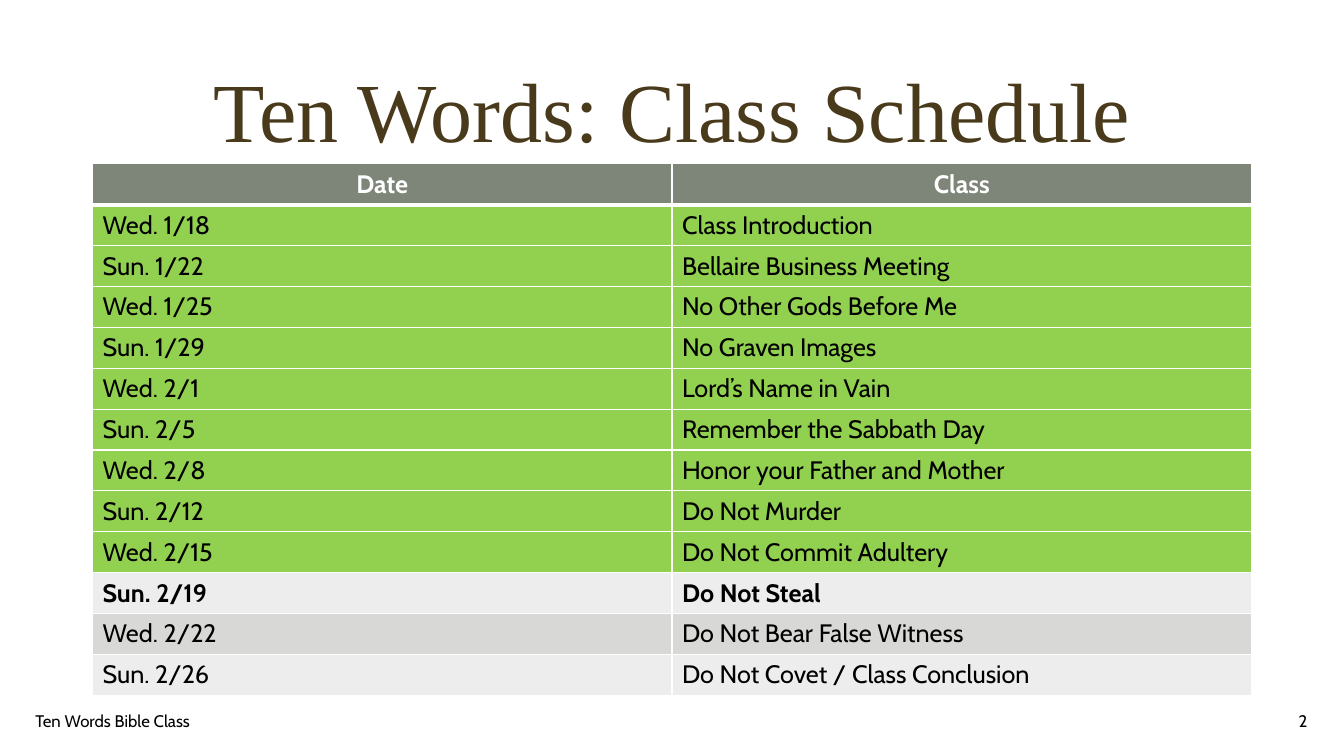
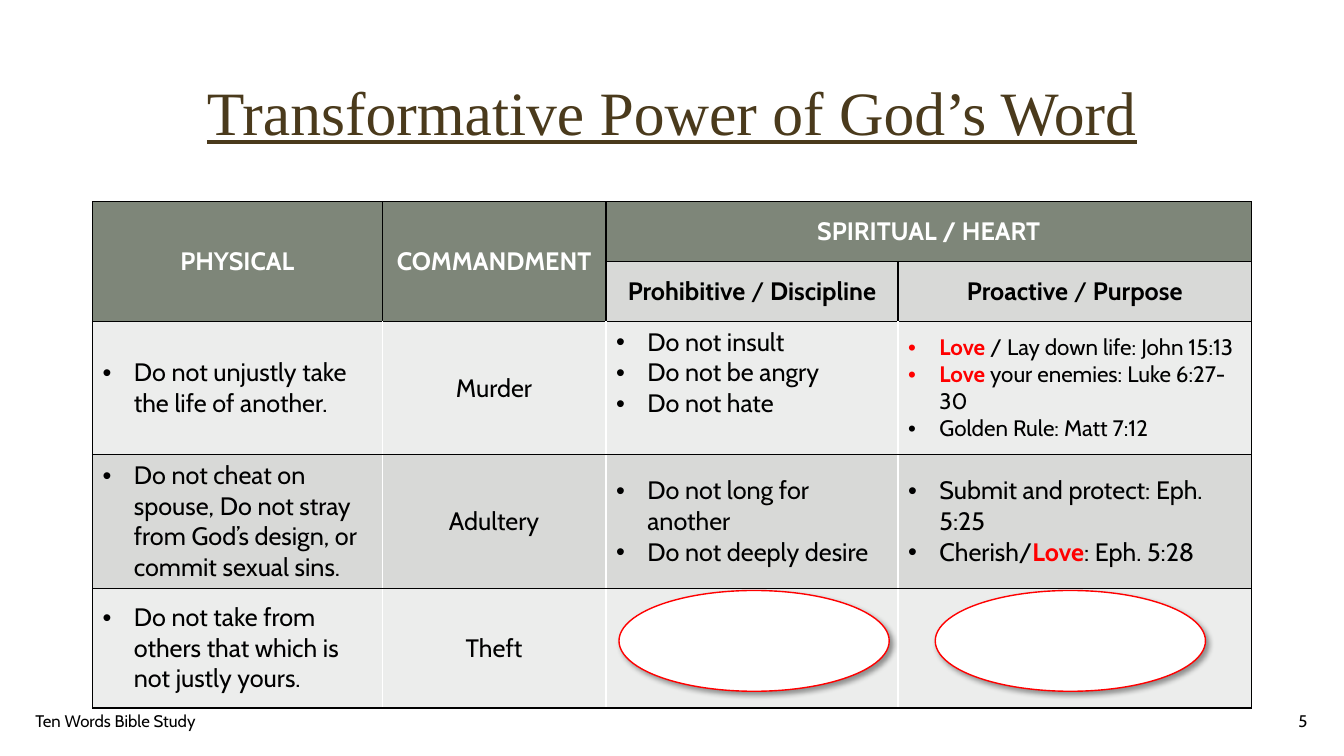
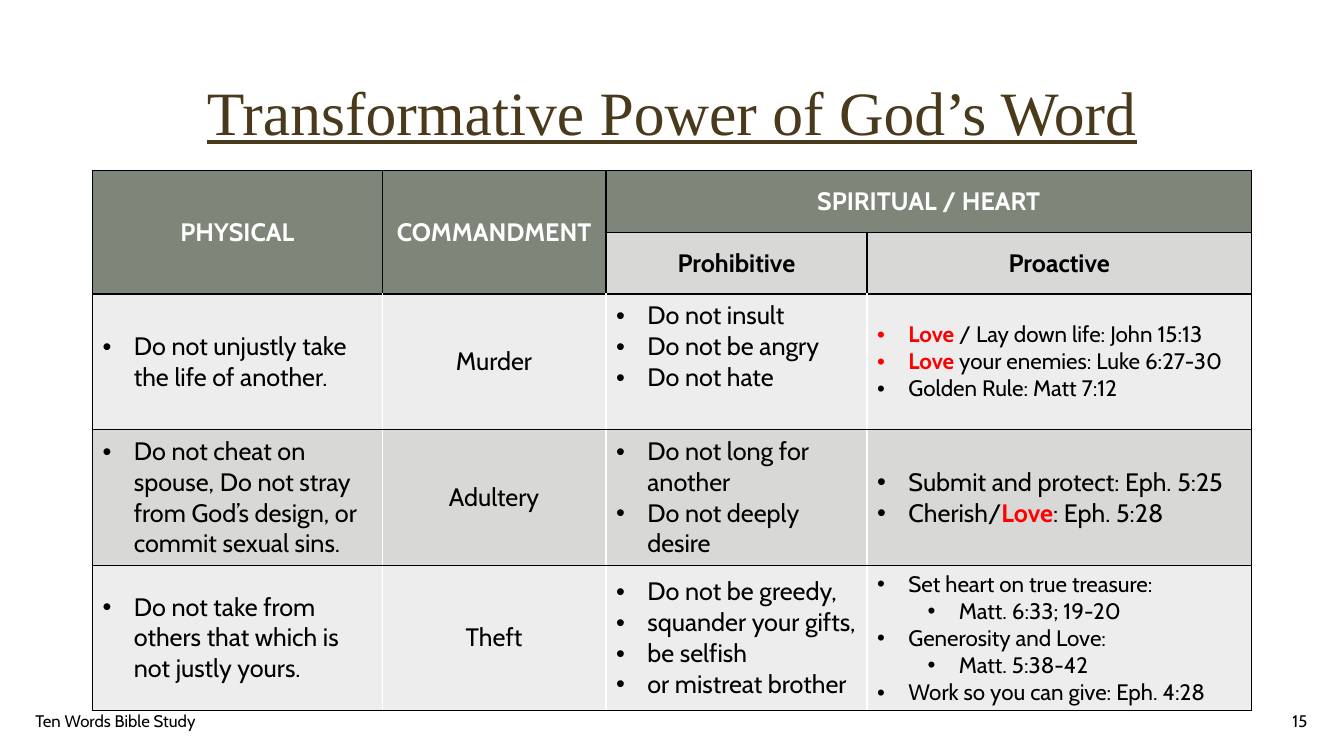
from lxml.etree import SubElement
from pptx import Presentation
from pptx.dml.color import RGBColor
from pptx.enum.shapes import MSO_SHAPE as Shape
from pptx.enum.text import MSO_ANCHOR as Anchor, PP_ALIGN as Align
from pptx.oxml.ns import qn
from pptx.util import Cm, Pt

# Colours
BROWN = RGBColor(0x4A, 0x3A, 0x1C)
BLACK = RGBColor(0, 0, 0)
WHITE = RGBColor(0xFF, 0xFF, 0xFF)
RED = RGBColor(0xFF, 0, 0)
SAGE = RGBColor(0x7E, 0x86, 0x79)
GREEN = RGBColor(0x92, 0xD0, 0x50)
LIGHT = RGBColor(0xEC, 0xED, 0xEC)
GREY = RGBColor(0xD8, 0xD9, 0xD7)

# Text formats
BODY = dict(name="Cabin", size=Pt(18), bold=False, color=BLACK)
SMALL = BODY | dict(size=Pt(16))
FOOTER = BODY | dict(size=Pt(12))
HEADER = BODY | dict(bold=True, color=WHITE)
SUBHEADER = BODY | dict(bold=True)
TITLE = dict(name="Times New Roman", color=BROWN)
KEYWORD = dict(bold=True, color=RED)
REGULAR = dict(bold=False)

# Table geometry in cm
TABLE_LEFT, TABLE_WIDTH = 2.33, 29.21
BULLET_INDENT, LEVEL_INDENT = 0.79, 1.27

# Class schedule
SCHEDULE = [
    ("Wed. 1/18", "Class Introduction"),
    ("Sun. 1/22", "Bellaire Business Meeting"),
    ("Wed. 1/25", "No Other Gods Before Me"),
    ("Sun. 1/29", "No Graven Images"),
    ("Wed. 2/1", "Lord’s Name in Vain"),
    ("Sun. 2/5", "Remember the Sabbath Day"),
    ("Wed. 2/8", "Honor your Father and Mother"),
    ("Sun. 2/12", "Do Not Murder"),
    ("Wed. 2/15", "Do Not Commit Adultery"),
    ("Sun. 2/19", "Do Not Steal"),
    ("Wed. 2/22", "Do Not Bear False Witness"),
    ("Sun. 2/26", "Do Not Covet / Class Conclusion"),
]
CLASSES_DONE = 9

# Commandment rows: *accented* words, ">" opens a second-level bullet
COMMANDMENTS = [
    ("Do not unjustly take the life of another.", "Murder",
     ["Do not insult", "Do not be angry", "Do not hate"],
     ["*Love* / Lay down life: John 15:13",
      "*Love* your enemies: Luke 6:27-30",
      "Golden Rule: Matt 7:12"]),
    ("Do not cheat on spouse, Do not stray from God’s design, "
     "or commit sexual sins.", "Adultery",
     ["Do not long for another", "Do not deeply desire"],
     ["Submit and protect: Eph. 5:25", "Cherish/*Love*: Eph. 5:28"]),
    ("Do not take from others that which is not justly yours.", "Theft",
     ["Do not be greedy,", "squander your gifts,", "be selfish",
      "or mistreat brother"],
     ["Set heart on true treasure:", ">Matt. 6:33; 19-20",
      "Generosity and Love:", ">Matt. 5:38-42",
      "Work so you can give: Eph. 4:28"]),
]


def add_bullet(paragraph, level):
    paragraph.level = level
    properties = paragraph._p.get_or_add_pPr()
    properties.set("marL", str(Cm(BULLET_INDENT + level * LEVEL_INDENT)))
    properties.set("indent", str(-Cm(BULLET_INDENT)))
    SubElement(properties, qn("a:buFont"), typeface="Arial")
    SubElement(properties, qn("a:buChar"), char="•")


def write(frame, lines, style, align=Align.LEFT, bullets=False, accent=KEYWORD):
    """Write one paragraph a line; text between asterisks takes the accent."""
    for number, line in enumerate(lines):
        paragraph = frame.add_paragraph() if number else frame.paragraphs[0]
        paragraph.alignment = align
        if bullets:
            add_bullet(paragraph, int(line.startswith(">")))
        for position, piece in enumerate(line.lstrip(">").split("*")):
            if not piece:
                continue
            run = paragraph.add_run()
            run.text = piece
            for key, value in (style | accent if position % 2 else style).items():
                if key == "color":
                    run.font.color.rgb = value
                else:
                    setattr(run.font, key, value)


def add_text(slide, box, text, style, align=Align.LEFT):
    frame = slide.shapes.add_textbox(*map(Cm, box)).text_frame
    frame.word_wrap = True
    frame.vertical_anchor = Anchor.MIDDLE
    write(frame, [text], style, align)
    return frame


def add_frame(presentation, title, title_style, footer, number):
    """New slide with the shared title and footer."""
    slide = presentation.slides.add_slide(presentation.slide_layouts[6])
    frame = add_text(slide, (2.33, 1.07, 29.21, 3.68), title,
                     TITLE | title_style, Align.CENTER)
    frame.paragraphs[0].line_spacing = 0.9
    add_text(slide, (0.64, 17.65, 11.43, 1.02), footer, FOOTER)
    add_text(slide, (25.58, 17.65, 7.62, 1.02), str(number), FOOTER, Align.RIGHT)
    return slide


def add_grid(slide, top, widths, heights):
    """Plain table with the given column widths and row heights."""
    table = slide.shapes.add_table(
        len(heights), len(widths), Cm(TABLE_LEFT), Cm(top),
        Cm(sum(widths)), Cm(sum(heights))).table
    table.first_row = table.horz_banding = False
    for column, width in zip(table.columns, widths):
        column.width = Cm(width)
    for row, height in zip(table.rows, heights):
        row.height = Cm(height)
    return table


def paint(cell, color, **borders):
    """Border each side with (colour, points), then fill the cell."""
    properties = cell._tc.get_or_add_tcPr()
    for side in "LRTB":
        line_color, points = borders[side]
        line = SubElement(properties, qn(f"a:ln{side}"), w=str(Pt(points)))
        fill = SubElement(line, qn("a:solidFill"))
        SubElement(fill, qn("a:srgbClr"), val=str(line_color))
    cell.fill.solid()
    cell.fill.fore_color.rgb = color


def add_schedule(slide, top):
    table = add_grid(slide, top, [TABLE_WIDTH / 2] * 2,
                     [1.03] * (len(SCHEDULE) + 1))
    thin = dict.fromkeys("LRTB", (WHITE, 1))
    for r, texts in enumerate([("Date", "Class")] + SCHEDULE):
        header, current = r == 0, r == CLASSES_DONE + 1
        band = GREEN if r <= CLASSES_DONE else (GREY, LIGHT)[(r - CLASSES_DONE) % 2]
        style = HEADER if header else SUBHEADER if current else BODY
        borders = dict(thin)
        if header:
            borders["B"] = (WHITE, 3)
        elif r == 1:
            borders["T"] = (WHITE, 3)
        for c, text in enumerate(texts):
            cell = table.cell(r, c)
            paint(cell, SAGE if header else band, **borders)
            write(cell.text_frame, [text], style,
                  Align.CENTER if header else Align.LEFT)


def add_commandments(slide, top, widths, heights, subheaders, answered):
    table = add_grid(slide, top, widths, heights)
    black, white = (BLACK, 1), (WHITE, 1)

    # Fills and borders
    for r in range(len(heights)):
        for c in range(len(widths)):
            cell = table.cell(r, c)
            cell.vertical_anchor = Anchor.MIDDLE
            if r < 2:
                color = GREY if r == 1 and c > 1 else SAGE
            else:
                color = (LIGHT, GREY)[r % 2]
            paint(cell, color, T=black, B=black,
                  L=black if r < 2 or c == 0 else white,
                  R=black if r < 2 or c == 3 else white)

    # Headers
    for c, (text, last) in enumerate([("PHYSICAL", (1, 0)), ("COMMANDMENT", (1, 1)),
                                      ("SPIRITUAL / HEART", (0, 3))]):
        cell = table.cell(0, c)
        cell.merge(table.cell(*last))
        write(cell.text_frame, [text], HEADER, Align.CENTER)
    for c, text in enumerate(subheaders, 2):
        write(table.cell(1, c).text_frame, [text], SUBHEADER, Align.CENTER,
              accent=REGULAR)

    # Commandments
    for r, (physical, name, prohibitive, proactive) in enumerate(COMMANDMENTS, 2):
        cells = [table.cell(r, c) for c in range(4)]
        write(cells[0].text_frame, [physical], BODY, bullets=True)
        write(cells[1].text_frame, [name], BODY, Align.CENTER)
        if r - 2 < answered:
            write(cells[2].text_frame, prohibitive, BODY, bullets=True)
            write(cells[3].text_frame, proactive,
                  SMALL if len(proactive) > 2 else BODY, bullets=True)
    table.cell(2, 2).margin_bottom = Cm(0.9)


def add_blank_oval(slide, left, top):
    oval = slide.shapes.add_shape(Shape.OVAL, Cm(left), Cm(top), Cm(6.81), Cm(2.54))
    oval.fill.solid()
    oval.fill.fore_color.rgb = WHITE
    oval.line.color.rgb = RED
    oval.line.width = Pt(1)
    oval.shadow.inherit = False
    effects = oval._element.spPr.find(qn("a:effectLst"))
    shadow = SubElement(effects, qn("a:outerShdw"), blurRad=str(Pt(4)),
                        dist=str(Pt(3)), dir=str(45 * 60000), algn="tl",
                        rotWithShape="0")
    color = SubElement(shadow, qn("a:srgbClr"), val=str(BLACK))
    SubElement(color, qn("a:alpha"), val="40000")


def main():
    presentation = Presentation()
    presentation.slide_width, presentation.slide_height = Cm(33.87), Cm(19.05)

    slide = add_frame(presentation, "Ten Words: Class Schedule",
                      dict(size=Pt(60)), "Ten Words Bible Class", 2)
    add_schedule(slide, 4.13)

    power = ("Transformative Power of God’s Word",
             dict(size=Pt(44), underline=True), "Ten Words Bible Study")
    slide = add_frame(presentation, *power, 5)
    add_commandments(slide, 5.08, [7.3, 5.64, 7.36, 8.91],
                     [1.51, 1.51, 3.36, 3.36, 3.02],
                     ["Prohibitive* / *Discipline", "Proactive* / *Purpose"], 2)
    for left in (15.6, 23.57):
        add_blank_oval(slide, left, 14.88)

    slide = add_frame(presentation, *power, 15)
    add_commandments(slide, 4.29, [7.3, 5.64, 6.58, 9.69],
                     [1.56, 1.56, 3.42, 3.42, 3.65],
                     ["Prohibitive", "Proactive"], 3)

    presentation.save("out.pptx")


if __name__ == "__main__":
    main()
